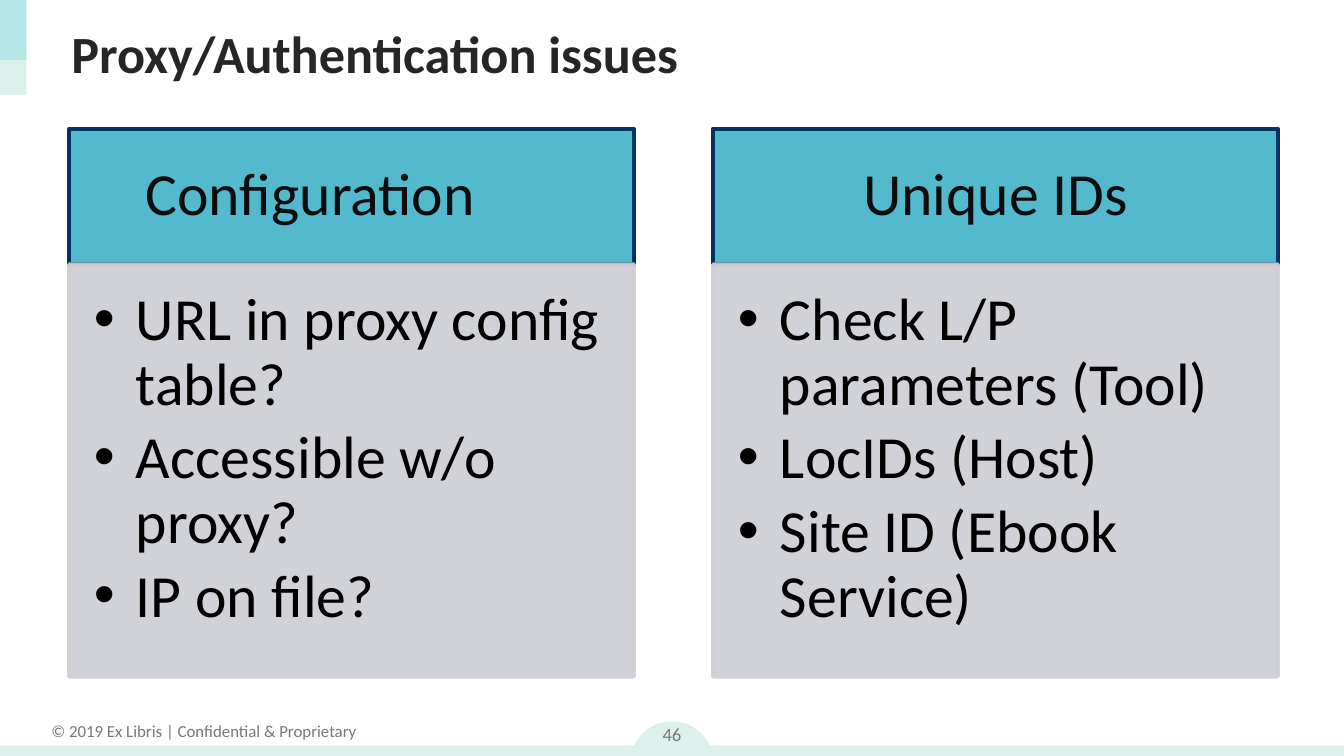
from lxml import etree
from pptx import Presentation
from pptx.dml.color import RGBColor
from pptx.enum.shapes import MSO_SHAPE
from pptx.enum.text import MSO_ANCHOR, PP_ALIGN
from pptx.oxml.ns import qn
from pptx.util import Pt

RECTANGLE, OVAL = MSO_SHAPE.RECTANGLE, MSO_SHAPE.OVAL
LEFT, CENTER = PP_ALIGN.LEFT, PP_ALIGN.CENTER
TOP, MIDDLE = MSO_ANCHOR.TOP, MSO_ANCHOR.MIDDLE

COLORS = {
    "mint": "DCF1EC",
    "aqua": "50CFDA",
    "teal": "53B9CD",
    "navy": "003466",
    "panel": "CCCED3",
    "footer": "787878",
    "title": "262626",
    "heading": "0D0D0D",
    "body": "000000",
}

presentation = Presentation()
presentation.slide_width = Pt(720)
presentation.slide_height = Pt(405)
slide = presentation.slides.add_slide(presentation.slide_layouts[6])


def add_block(kind, box, fill, line=None, opacity=100):
    shape = slide.shapes.add_shape(kind, *[Pt(length) for length in box])
    shape.shadow.inherit = False
    shape.fill.solid()
    shape.fill.fore_color.rgb = RGBColor.from_string(COLORS[fill])
    if line:
        shape.line.color.rgb = RGBColor.from_string(COLORS[line])
        shape.line.width = Pt(2)
    else:
        shape.line.fill.background()
    if opacity < 100:
        for color in shape._element.spPr.iter(qn("a:srgbClr")):
            etree.SubElement(color, qn("a:alpha"), val=str(opacity * 1000))
    return shape


def write(shape, text, size, color, bold=False, align=LEFT, anchor=TOP, wrap=True,
          insets=(7.2, 3.6, 7.2, 3.6), line_spacing=1.0, space_after=0, bullet_indent=0):
    frame = shape.text_frame
    frame.word_wrap = wrap
    frame.vertical_anchor = anchor
    frame.margin_left, frame.margin_top, frame.margin_right, frame.margin_bottom = map(Pt, insets)
    for index, words in enumerate(text.split("\n")):
        paragraph = frame.add_paragraph() if index else frame.paragraphs[0]
        if bullet_indent:
            properties = paragraph._p.get_or_add_pPr()
            properties.set("marL", str(Pt(bullet_indent)))
            properties.set("indent", str(-Pt(bullet_indent)))
            etree.SubElement(properties, qn("a:buFont"), typeface="Arial")
            etree.SubElement(properties, qn("a:buChar"), char="•")
        paragraph.alignment = align
        paragraph.line_spacing = line_spacing
        paragraph.space_after = Pt(space_after)
        run = paragraph.add_run()
        run.text = words
        run.font.name = "Calibri"
        run.font.size = Pt(size)
        run.font.bold = bold
        run.font.color.rgb = RGBColor.from_string(COLORS[color])


add_block(OVAL, (337.5, 386.5, 45, 45), "mint")
add_block(RECTANGLE, (0, 399.5, 720, 8), "mint")
add_block(RECTANGLE, (0, 0, 14.2, 51), "mint")
add_block(RECTANGLE, (0, 0, 14.2, 32.3), "aqua", opacity=27)

copyright_box = slide.shapes.add_textbox(Pt(19.5), Pt(382.7), Pt(179.3), Pt(18))
write(copyright_box, "© 2019 Ex Libris | Confidential & Proprietary",
      size=9, color="footer", align=CENTER, wrap=False)
number_box = slide.shapes.add_textbox(Pt(338.7), Pt(379), Pt(42.5), Pt(28.8))
write(number_box, "46", size=10, color="footer", align=CENTER, anchor=MIDDLE)
title_box = slide.shapes.add_textbox(Pt(31.2), Pt(5.5), Pt(663), Pt(45))
write(title_box, "Proxy/Authentication issues", size=28, color="title", bold=True, anchor=MIDDLE)

COLUMN_WIDTH, COLUMN_STEP = 302.7, 345
FIRST_LEFT, HEADING_TOP, HEADING_HEIGHT, BODY_HEIGHT = 36.9, 69, 72.6, 221

columns = [
    ("Configuration", 62, "URL in proxy config table?\nAccessible w/o proxy?\nIP on file?"),
    ("Unique IDs", 18, "Check L/P parameters (Tool)\nLocIDs (Host)\nSite ID (Ebook Service)"),
]
for index, (heading, right_inset, points) in enumerate(columns):
    left = FIRST_LEFT + index * COLUMN_STEP
    heading_block = add_block(RECTANGLE, (left, HEADING_TOP, COLUMN_WIDTH, HEADING_HEIGHT),
                              "teal", line="navy")
    write(heading_block, heading, size=32, color="heading", align=CENTER, anchor=MIDDLE,
          insets=(18, 10, right_inset, 10), line_spacing=0.9)
    body_block = add_block(RECTANGLE, (left, HEADING_TOP + HEADING_HEIGHT, COLUMN_WIDTH, BODY_HEIGHT),
                           "panel", line="panel", opacity=90)
    write(body_block, points, size=32, color="body", insets=(13.4, 13.4, 16, 20.2),
          line_spacing=0.9, space_after=4.8, bullet_indent=22.5)

presentation.save("out.pptx")
